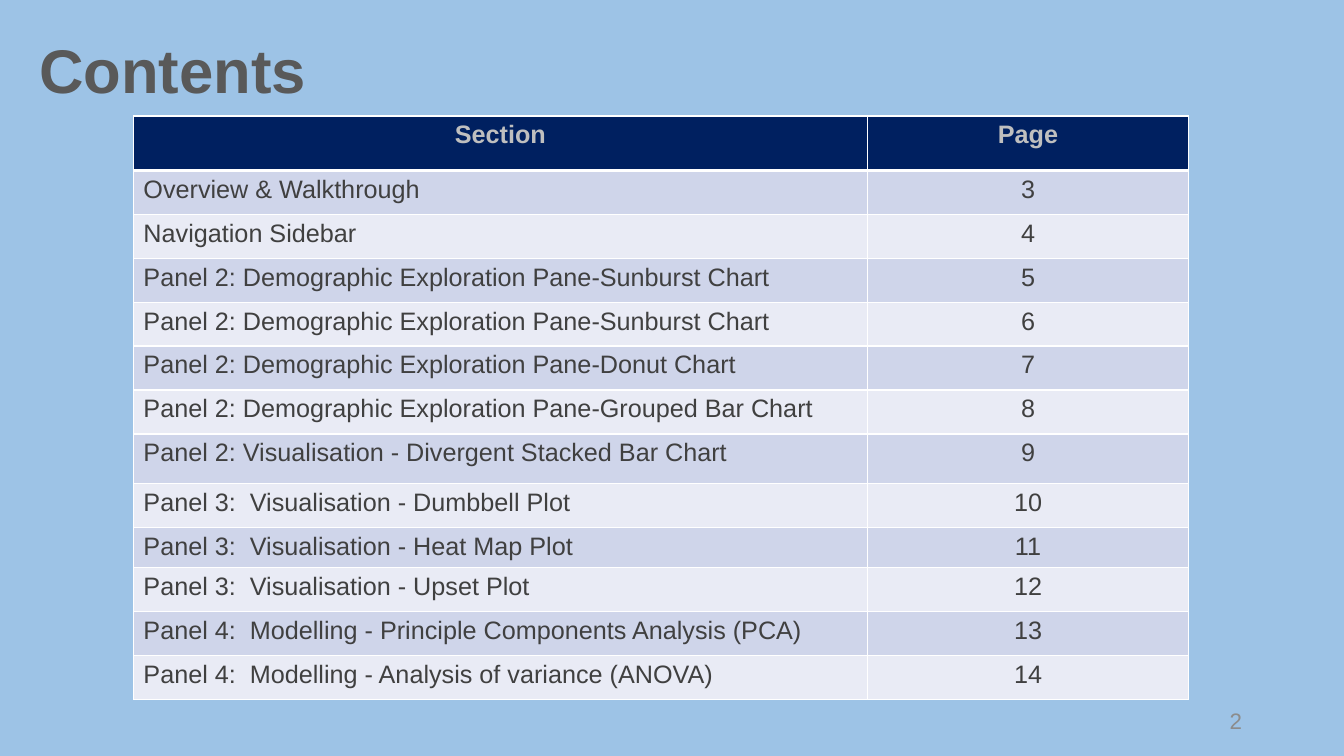
from dataclasses import dataclass

from lxml.etree import SubElement
from pptx import Presentation
from pptx.dml.color import RGBColor
from pptx.enum.text import MSO_ANCHOR, PP_ALIGN
from pptx.oxml.ns import qn
from pptx.util import Pt


@dataclass(frozen=True)
class Theme:
    """Colours, font and type sizes of the slide."""
    font: str = "Arial"
    back: str = "9DC3E6"
    title: str = "595959"
    head: str = "002060"
    label: str = "BFBFBF"
    body: str = "404040"
    bands: tuple = ("CFD5EA", "E9EBF5")
    line: str = "FFFFFF"
    number: str = "8C8C8C"
    big: int = 44
    mid: int = 18
    small: int = 16


THEME = Theme()
WIDTHS = (524.2, 229.7)
HEAD = 38.9
ROW = 31.4
HEIGHTS = {7: 35.3, 9: 27.7}
FIRST = 3
TOPICS = (
    "Overview & Walkthrough",
    "Navigation Sidebar",
    "Panel 2: Demographic Exploration Pane-Sunburst Chart",
    "Panel 2: Demographic Exploration Pane-Sunburst Chart",
    "Panel 2: Demographic Exploration Pane-Donut Chart",
    "Panel 2: Demographic Exploration Pane-Grouped Bar Chart",
    "Panel 2: Visualisation - Divergent Stacked Bar Chart",
    "Panel 3:  Visualisation - Dumbbell Plot",
    "Panel 3:  Visualisation - Heat Map Plot",
    "Panel 3:  Visualisation - Upset Plot",
    "Panel 4:  Modelling - Principle Components Analysis (PCA)",
    "Panel 4:  Modelling - Analysis of variance (ANOVA)",
)


def write(frame, text, size, color, bold=False, align=PP_ALIGN.LEFT):
    """Put one styled paragraph in a text frame."""
    frame.text = text
    para = frame.paragraphs[0]
    para.alignment = align
    font = para.runs[0].font
    font.name, font.size, font.bold = THEME.font, Pt(size), bold
    font.color.rgb = RGBColor.from_string(color)
    return para


def add_text(slide, box, *args, **style):
    """Add a text box centred in height and return its paragraph."""
    frame = slide.shapes.add_textbox(*map(Pt, box)).text_frame
    frame.word_wrap = True
    frame.vertical_anchor = MSO_ANCHOR.MIDDLE
    return write(frame, *args, **style)


def add_edges(cell, top, bottom):
    """Draw the four borders of a cell."""
    props = cell._tc.get_or_add_tcPr()
    for side, width in zip("LRTB", (1, 1, top, bottom)):
        edge = SubElement(props, qn(f"a:ln{side}"), w=str(Pt(width)))
        fill = SubElement(edge, qn("a:solidFill"))
        SubElement(fill, qn("a:srgbClr"), val=THEME.line)


def fill_cell(cell, text, row, align):
    """Write and paint one cell by its row."""
    head = row == 0
    write(cell.text_frame, text, THEME.mid,
          THEME.label if head else THEME.body, head, align)
    add_edges(cell, 3 if row == 1 else 1, 3 if head else 1)
    cell.fill.solid()
    color = THEME.head if head else THEME.bands[(row - 1) % 2]
    cell.fill.fore_color.rgb = RGBColor.from_string(color)


def add_contents(slide, left, top):
    """Add the table of sections and pages."""
    rows = [("Section", "Page")]
    rows += [(topic, str(page)) for page, topic in enumerate(TOPICS, FIRST)]
    tall = [HEAD] + [HEIGHTS.get(n, ROW) for n in range(1, len(rows))]
    table = slide.shapes.add_table(
        len(rows), len(WIDTHS), Pt(left), Pt(top),
        Pt(sum(WIDTHS)), Pt(sum(tall))).table
    for column, width in zip(table.columns, WIDTHS):
        column.width = Pt(width)
    for row, texts in enumerate(rows):
        table.rows[row].height = Pt(tall[row])
        for col, text in enumerate(texts):
            left_side = row and col == 0
            align = PP_ALIGN.LEFT if left_side else PP_ALIGN.CENTER
            fill_cell(table.cell(row, col), text, row, align)


def main():
    """Build the contents slide."""
    deck = Presentation()
    deck.slide_width, deck.slide_height = Pt(960), Pt(540)
    slide = deck.slides.add_slide(deck.slide_layouts[6])
    slide.background.fill.solid()
    slide.background.fill.fore_color.rgb = RGBColor.from_string(THEME.back)
    title = add_text(slide, (20.9, 0, 828, 104.4), "Contents",
                     THEME.big, THEME.title, bold=True)
    title.line_spacing = 0.9
    add_contents(slide, 95.3, 82.8)
    add_text(slide, (678.2, 500.4, 216, 28.8), "2",
             THEME.small, THEME.number, align=PP_ALIGN.RIGHT)
    deck.save("out.pptx")


if __name__ == "__main__":
    main()
